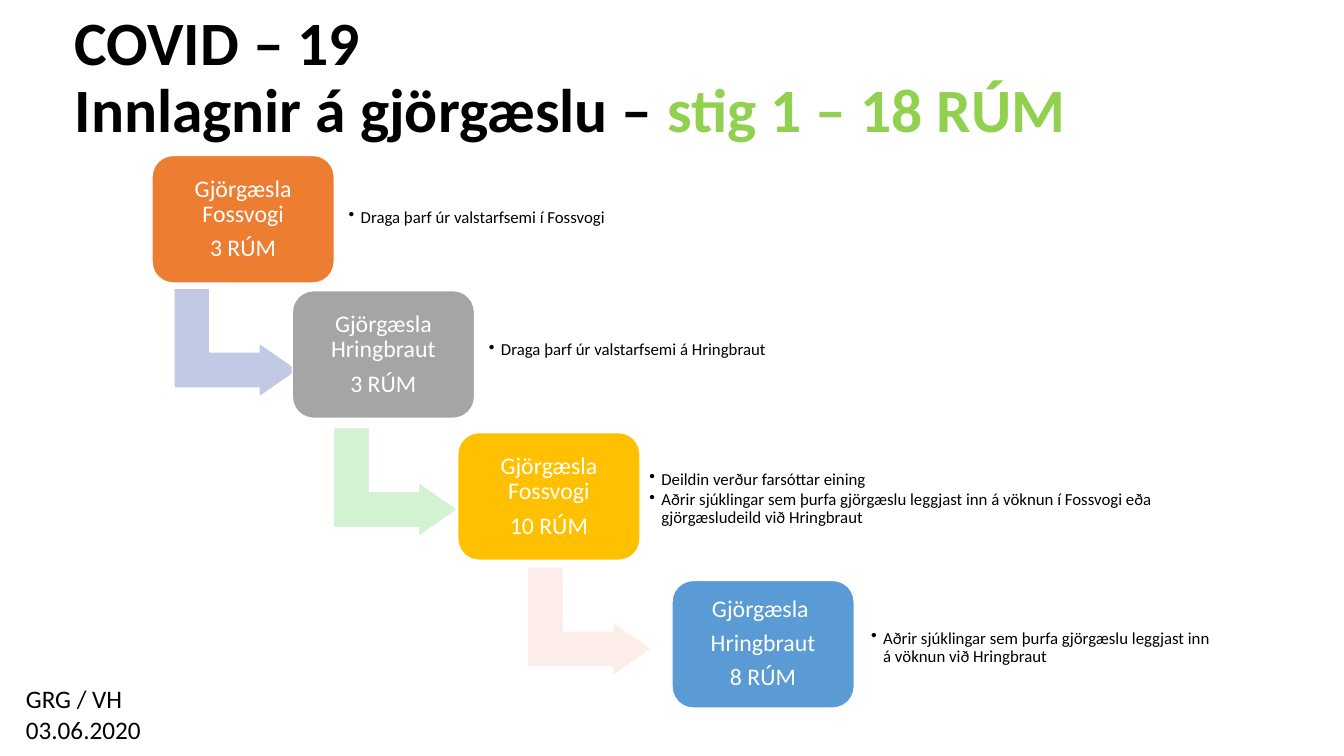
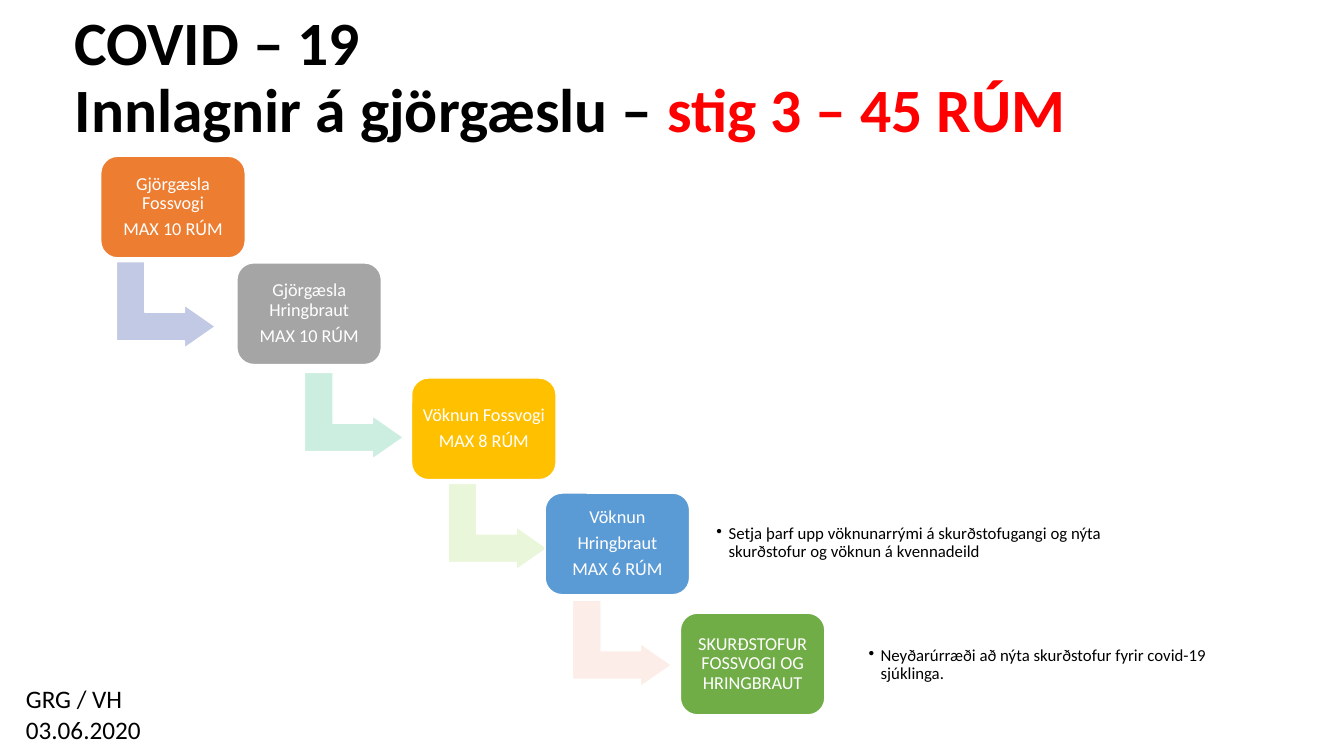
"""Build two slides showing the stepwise opening of intensive care beds."""
from collections import namedtuple

from lxml.etree import SubElement
from pptx import Presentation
from pptx.dml.color import RGBColor
from pptx.enum.shapes import MSO_SHAPE as Shape
from pptx.enum.text import MSO_ANCHOR as Anchor, MSO_AUTO_SIZE as AutoSize, PP_ALIGN as Align
from pptx.oxml.ns import qn
from pptx.util import Inches, Pt

COLUMNS, ROWS = 160, 90
SLIDE_WIDTH, SLIDE_HEIGHT = Inches(13.33), Inches(7.5)
FONT = "Calibri"
COLORS = {
    "text": "000000", "white": "FFFFFF",
    "orange": "ED7D31", "gray": "A5A5A5", "gold": "FFC000", "blue": "5B9BD5", "green": "70AD47",
    "pale blue": "C1C9E4", "pale green": "D2F2D2", "pale mint": "CBEEE0",
    "pale lime": "EAF6D9", "pale rose": "FCEDE8",
    "stage 1": "92D050", "stage 3": "FF0000",
}
STEP_COLORS = ["orange", "gray", "gold", "blue", "green"]

Style = namedtuple("Style", "box arrow note_height size inset")
Step = namedtuple("Step", "place lines note arrow", defaults=(None, None))
Note = namedtuple("Note", "left top width lines")
Arrow = namedtuple("Arrow", "left top color")

LARGE = Style((21.7, 15.2), (13, 14.8), 12.4, 17, 0.8)
SMALL = Style((17.2, 12.1), (10.3, 11.8), 9.8, 13, 0.4)

STAGE_1 = [
    Step((18.1, 18.5), ["Gjörgæsla Fossvogi", "3 RÚM"],
         Note(40.9, 19.7, 41.8, ["Draga þarf úr valstarfsemi í Fossvogi"]),
         Arrow(21.6, 33.4, "pale blue")),
    Step((34.8, 34.6), ["Gjörgæsla Hringbraut", "3 RÚM"],
         Note(57.6, 35.5, 41.8, ["Draga þarf úr valstarfsemi á Hringbraut"]),
         Arrow(40.6, 50, "pale green")),
    Step((54.5, 51.5), ["Gjörgæsla Fossvogi", "10 RÚM"],
         Note(76.7, 53.2, 71.5, [
             "Deildin verður farsóttar eining",
             "Aðrir sjúklingar sem þurfa gjörgæslu leggjast inn á vöknun í Fossvogi eða "
             "gjörgæsludeild við Hringbraut"]),
         Arrow(63.7, 66.6, "pale rose")),
    Step((80, 69.1), ["Gjörgæsla ", "Hringbraut", "8 RÚM"],
         Note(103.1, 70.9, 42.6, [
             "Aðrir sjúklingar sem þurfa gjörgæslu leggjast inn á vöknun við Hringbraut"])),
]
STAGE_3 = [
    Step((12, 18.6), ["Gjörgæsla Fossvogi", "MAX 10 RÚM"],
         arrow=Arrow(14.6, 30.4, "pale blue")),
    Step((28.2, 31.3), ["Gjörgæsla Hringbraut", "MAX 10 RÚM"],
         arrow=Arrow(37, 43.6, "pale mint")),
    Step((49, 45), ["Vöknun Fossvogi", "MAX 8 RÚM"],
         arrow=Arrow(54.1, 56.8, "pale lime")),
    Step((64.9, 58.7), ["Vöknun", "Hringbraut", "MAX 6 RÚM"],
         Note(84.7, 59.8, 47.4, [
             "Setja þarf upp vöknunarrými á skurðstofugangi og nýta skurðstofur "
             "og vöknun á kvennadeild"]),
         Arrow(68.9, 70.7, "pale rose")),
    Step((81, 73), ["SKURÐSTOFUR FOSSVOGI OG HRINGBRAUT"],
         Note(102.8, 74.3, 47, ["Neyðarúrræði að nýta skurðstofur fyrir covid-19 sjúklinga."])),
]


def color(name):
    return RGBColor.from_string(COLORS[name])


def across(columns):
    return round(SLIDE_WIDTH * columns / COLUMNS)


def down(rows):
    return round(SLIDE_HEIGHT * rows / ROWS)


def area(left, top, width, height):
    return across(left), down(top), across(width), down(height)


def set_font(font, size, color_name, bold=False):
    font.name, font.size, font.bold = FONT, Pt(size), bold
    font.color.rgb = color(color_name)


def set_inset(frame, columns):
    frame.margin_left = frame.margin_right = across(columns)
    frame.margin_top = frame.margin_bottom = down(columns)


def write_lines(frame, lines, size, color_name="text", align=Align.LEFT, spacing=1, gap=0):
    frame.word_wrap = True
    for index, line in enumerate(lines):
        para = frame.add_paragraph() if index else frame.paragraphs[0]
        para.text = line
        para.alignment = align
        para.line_spacing = spacing
        para.space_after = Pt(size * gap)
        set_font(para.font, size, color_name)


def add_bullet(para):
    properties = para._p.get_or_add_pPr()
    indent = Inches(0.12)
    properties.set("marL", str(indent))
    properties.set("indent", str(-indent))
    SubElement(properties, qn("a:buChar")).set("char", "•")


def add_title(page, stage, color_name):
    title = page.shapes.title
    title.left, title.top, title.width, title.height = area(7.7, 0.7, 138, 17.4)
    frame = title.text_frame
    frame.auto_size = AutoSize.NONE
    frame.vertical_anchor = Anchor.MIDDLE
    para = frame.paragraphs[0]
    para.alignment = Align.LEFT
    para.line_spacing = 0.9
    for text, span_color in [("COVID – 19 \v", "text"),
                             ("Innlagnir á gjörgæslu – ", "text"), (stage, color_name)]:
        span = para.add_run()
        span.text = text.rstrip("\v")
        set_font(span.font, 44, span_color, bold=True)
        if text.endswith("\v"):
            para.add_line_break()


def add_filled(page, kind, place, fill):
    shape = page.shapes.add_shape(kind, *place)
    shape.shadow.inherit = False
    shape.fill.solid()
    shape.fill.fore_color.rgb = color(fill)
    shape.line.color.rgb = color("white")
    shape.line.width = Pt(1)
    return shape


def add_arrow(page, arrow, style):
    shape = add_filled(page, Shape.BENT_UP_ARROW,
                       area(arrow.left, arrow.top, *style.arrow), arrow.color)
    shape.rotation = 90
    for index, value in enumerate([0.33, 0.25, 0.36]):
        shape.adjustments[index] = value


def add_box(page, step, fill, style):
    box = add_filled(page, Shape.ROUNDED_RECTANGLE, area(*step.place, *style.box), fill)
    frame = box.text_frame
    frame.vertical_anchor = Anchor.MIDDLE
    set_inset(frame, style.inset)
    write_lines(frame, step.lines, style.size, "white", Align.CENTER, 0.9, 0.35)


def add_note(page, note, style):
    box = page.shapes.add_textbox(*area(note.left, note.top, note.width, style.note_height))
    frame = box.text_frame
    frame.vertical_anchor = Anchor.MIDDLE
    set_inset(frame, 0.6)
    write_lines(frame, note.lines, 12, spacing=0.9, gap=0.15)
    for para in frame.paragraphs:
        add_bullet(para)


def add_signature(page):
    box = page.shapes.add_textbox(*area(1.9, 80.8, 32.8, 8.5))
    write_lines(box.text_frame, ["GRG / VH", "03.06.2020"], 18)


def add_stage(deck, stage, color_name, steps, style):
    page = deck.slides.add_slide(deck.slide_layouts.get_by_name("Title Only"))
    add_title(page, stage, color_name)
    for step, fill in zip(steps, STEP_COLORS):
        if step.arrow:
            add_arrow(page, step.arrow, style)
        add_box(page, step, fill, style)
        if step.note:
            add_note(page, step.note, style)
    add_signature(page)


def main():
    deck = Presentation()
    deck.slide_width, deck.slide_height = SLIDE_WIDTH, SLIDE_HEIGHT
    add_stage(deck, "stig 1 – 18 RÚM", "stage 1", STAGE_1, LARGE)
    add_stage(deck, "stig 3 – 45 RÚM", "stage 3", STAGE_3, SMALL)
    deck.save("out.pptx")


if __name__ == "__main__":
    main()
